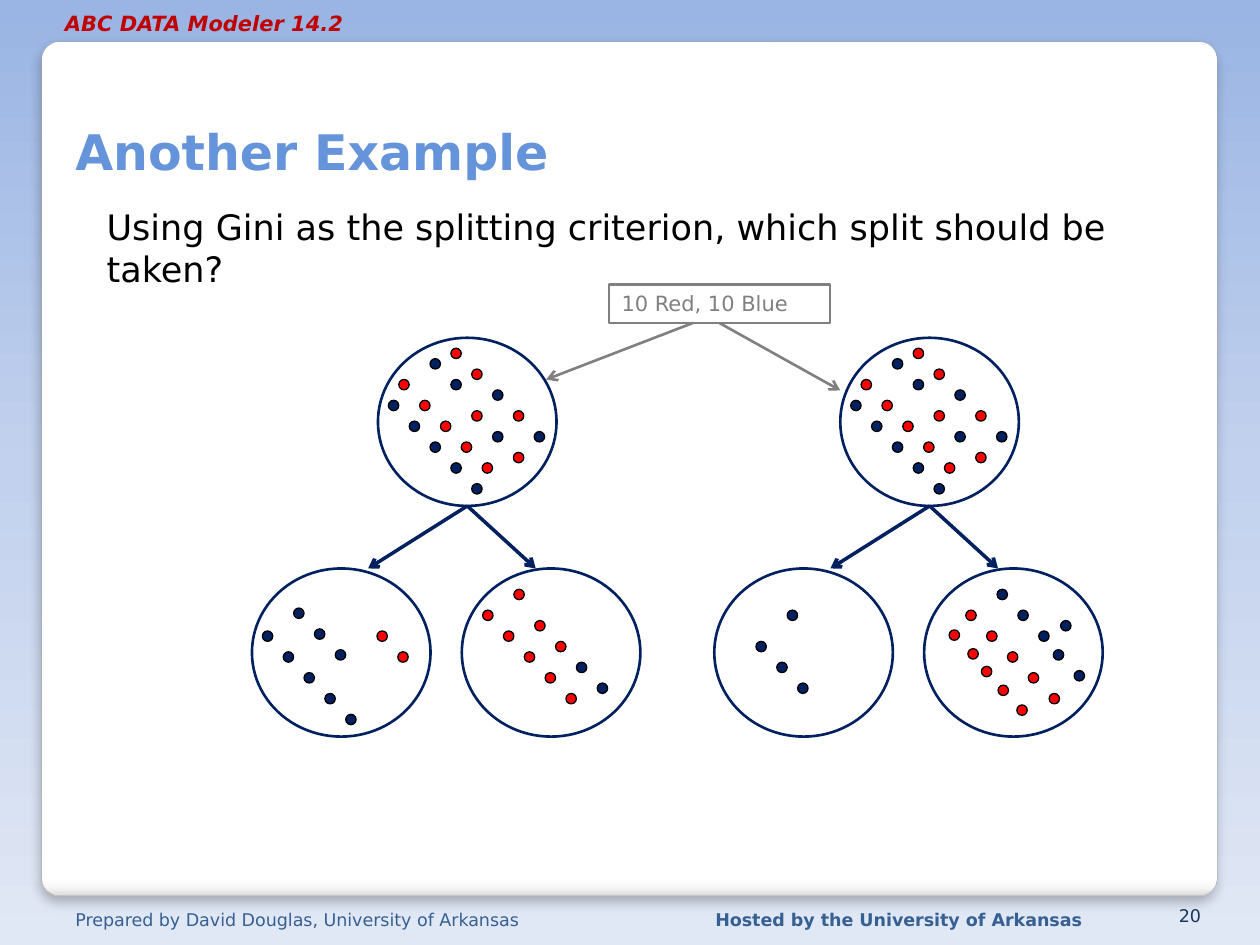
from dataclasses import dataclass

from lxml import etree
from pptx import Presentation
from pptx.dml.color import RGBColor
from pptx.enum.shapes import MSO_CONNECTOR, MSO_SHAPE
from pptx.enum.text import MSO_ANCHOR, PP_ALIGN
from pptx.oxml.ns import qn
from pptx.util import Cm, Pt

STRAIGHT = MSO_CONNECTOR.STRAIGHT
CIRCLE = MSO_SHAPE.FLOWCHART_CONNECTOR
ROUNDED = MSO_SHAPE.ROUNDED_RECTANGLE
TOP, BOTTOM = MSO_ANCHOR.TOP, MSO_ANCHOR.BOTTOM
LEFT, RIGHT = PP_ALIGN.LEFT, PP_ALIGN.RIGHT


@dataclass(frozen=True)
class Theme:
    font: str = "DejaVu Sans"
    title: str = "6594DA"
    header: str = "C00000"
    footer: str = "376092"
    number: str = "17375E"
    text: str = "000000"
    navy: str = "002060"
    red: str = "FF0000"
    gray: str = "808080"
    card_line: str = "A4A4A4"
    background: tuple = ((0, "9AB5E4"), (50, "C2D1ED"), (100, "E1E8F5"))
    card: tuple = ((0, "FFFFFF"), (98, "FFFFFF"), (99, "F7F7F7"), (100, "DADADA"))
    title_size: int = 28
    body_size: int = 20
    label_size: int = 12
    footer_size: int = 10


THEME = Theme()

NODE_W, NODE_H = 3.6, 3.39
GRID = 0.21
PARENT_TOP, CHILD_TOP = 6.81, 11.46
CHILD_OFFSETS = (-2.54, 1.69)
ARROW_OFFSETS = (-0.2, 3.18)

PARENT = {
    "navy": [(1, 6), (3, 8), (5, 10), (7, 12), (9, 14),
             (5, 2), (7, 4), (11, 5), (11, 9), (15, 9)],
    "red": [(2, 4), (4, 6), (6, 8), (8, 10), (10, 12),
            (7, 1), (9, 3), (9, 7), (13, 7), (13, 11)],
}
LEFT_SPLIT = (
    {"navy": [(1, 6), (3, 8), (5, 10), (7, 12), (9, 14),
              (4, 3.8), (6, 5.8), (8, 7.8)],
     "red": [(12, 6), (14, 8)]},
    {"navy": [(11, 9), (13, 11)],
     "red": [(2, 4), (4, 6), (6, 8), (8, 10), (10, 12),
             (5, 2), (7, 5), (9, 7)]},
)
RIGHT_SPLIT = (
    {"navy": [(4, 7), (6, 9), (8, 11), (7, 4)]},
    {"navy": [(7, 2), (9, 4), (11, 6), (13.1, 5), (12.4, 7.8), (14.4, 9.8)],
     "red": [(4, 4), (6, 6), (8, 8), (10, 10), (12, 12),
             (2.4, 5.9), (4.2, 7.7), (5.5, 9.4), (7.1, 11.2), (8.9, 13.1)]},
)


def rgb(color):
    return RGBColor.from_string(color)


def set_gradient(fill, holder, stops):
    fill.gradient()
    fill.gradient_angle = 270
    stop_list = holder.find(".//" + qn("a:gsLst"))
    stop_list.clear()
    for position, color in stops:
        gs = etree.SubElement(stop_list, qn("a:gs"), pos=str(position * 1000))
        etree.SubElement(gs, qn("a:srgbClr"), val=color)


def set_line(line, color, width):
    line.color.rgb = rgb(color)
    line.width = Pt(width)


def add_card(slide):
    sp = slide.shapes.add_shape(ROUNDED, Cm(0.84), Cm(0.84), Cm(23.7), Cm(17.22))
    sp.adjustments[0] = 0.021
    set_gradient(sp.fill, sp._element, THEME.card)
    set_line(sp.line, THEME.card_line, 0.16)
    effects = etree.SubElement(sp._element.spPr, qn("a:effectLst"))
    shadow = etree.SubElement(
        effects, qn("a:outerShdw"), blurRad=str(Pt(6)), dist=str(Pt(4)),
        dir="5400000", algn="t", rotWithShape="0")
    color = etree.SubElement(shadow, qn("a:srgbClr"), val="000000")
    etree.SubElement(color, qn("a:alpha"), val="25000")


def add_text(slide, text, box, size, color, bold=False, italic=False,
             align=LEFT, anchor=TOP, wrap=True):
    sp = slide.shapes.add_textbox(*(Cm(v) for v in box))
    tf = sp.text_frame
    tf.word_wrap = wrap
    tf.vertical_anchor = anchor
    p = tf.paragraphs[0]
    p.text = text
    p.alignment = align
    p.font.name = THEME.font
    p.font.size = Pt(size)
    p.font.bold = bold
    p.font.italic = italic
    p.font.color.rgb = rgb(color)
    return sp


def add_circle(slide, x, y, w, h, line, width, fill=None):
    sp = slide.shapes.add_shape(CIRCLE, Cm(x), Cm(y), Cm(w), Cm(h))
    sp.shadow.inherit = False
    set_line(sp.line, line, width)
    if fill:
        sp.fill.solid()
        sp.fill.fore_color.rgb = rgb(fill)
    else:
        sp.fill.background()


def add_arrow(slide, start, end, color, width):
    c = slide.shapes.add_connector(STRAIGHT, *(Cm(v) for v in start + end))
    set_line(c.line, color, width)
    etree.SubElement(c.line._get_or_add_ln(), qn("a:tailEnd"), type="arrow")
    etree.SubElement(c._element.spPr, qn("a:effectLst"))


def add_node(slide, x, y, dots):
    add_circle(slide, x, y, NODE_W, NODE_H, THEME.navy, 1.5)
    for name, cells in dots.items():
        for column, row in cells:
            add_circle(slide, x + column * GRID, y + row * GRID, GRID, GRID,
                       THEME.text, 0.75, getattr(THEME, name))


def add_split(slide, x, children):
    add_node(slide, x, PARENT_TOP, PARENT)
    start = (x + NODE_W / 2, PARENT_TOP + NODE_H)
    for child, offset, tip in zip(children, CHILD_OFFSETS, ARROW_OFFSETS):
        add_node(slide, x + offset, CHILD_TOP, child)
        add_arrow(slide, start, (x + tip, CHILD_TOP), THEME.navy, 2)


def add_source_label(slide):
    sp = add_text(slide, "10 Red, 10 Blue", (12.28, 5.74, 4.45, 0.77),
                  THEME.label_size, THEME.gray)
    set_line(sp.line, THEME.gray, 1.5)
    add_arrow(slide, (13.97, 6.51), (11.01, 7.65), THEME.gray, 1.5)
    add_arrow(slide, (14.5, 6.51), (16.94, 7.87), THEME.gray, 1.5)


def add_frame_text(slide):
    add_text(slide, "ABC DATA Modeler 14.2", (1.06, 0.08, 6.12, 0.76),
             THEME.label_size, THEME.header, bold=True, italic=True, wrap=False)
    add_text(slide, "Another Example", (1.27, 0.84, 22.73, 2.92),
             THEME.title_size, THEME.title, bold=True, anchor=BOTTOM)
    add_text(slide, "Prepared by David Douglas, University of Arkansas",
             (1.27, 18.21, 11.33, 0.58), THEME.footer_size, THEME.footer)
    add_text(slide, "Hosted by the University of Arkansas",
             (14.17, 18.21, 8.69, 0.58), THEME.footer_size, THEME.footer, bold=True)
    add_text(slide, "20", (23.19, 18.21, 1.27, 0.58), THEME.footer_size,
             THEME.number, align=RIGHT, anchor=BOTTOM)


def main():
    prs = Presentation()
    prs.slide_width, prs.slide_height = Cm(25.4), Cm(19.05)
    slide = prs.slides.add_slide(prs.slide_layouts[6])
    set_gradient(slide.background.fill, slide._element, THEME.background)
    add_card(slide)
    add_frame_text(slide)
    add_split(slide, 7.62, LEFT_SPLIT)
    add_split(slide, 16.94, RIGHT_SPLIT)
    add_source_label(slide)
    add_text(slide,
             "Using Gini as the splitting criterion, which split should be taken?",
             (1.9, 4.02, 22.65, 1.96), THEME.body_size, THEME.text)
    prs.save("out.pptx")


if __name__ == "__main__":
    main()
